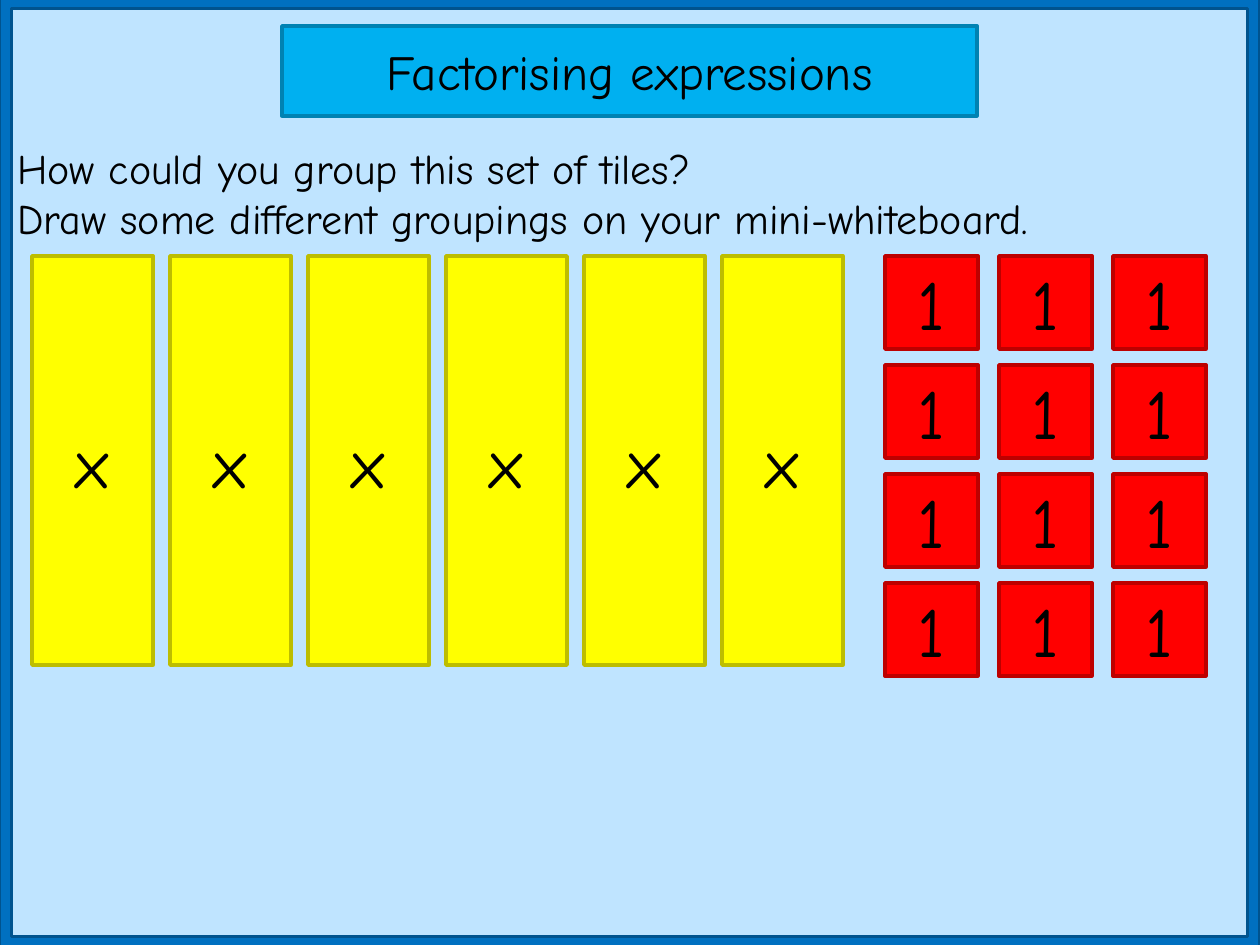
from pptx import Presentation
from pptx.dml.color import RGBColor
from pptx.enum.shapes import MSO_SHAPE as SHAPE
from pptx.enum.text import MSO_ANCHOR as ANCHOR, PP_ALIGN as ALIGN
from pptx.util import Emu, Pt

PX = 914400 // 126


def px(*lengths):
    """Turn px lengths into EMU."""
    return [Emu(n * PX) for n in lengths]


def color(value):
    return RGBColor.from_string(value)


class TileSlide:
    """The slide being built and its style."""
    font = "Comic Neue"
    ink = "000000"
    line_width = Pt(2)

    def __init__(self, prs, background):
        self.s = prs.slides.add_slide(prs.slide_layouts[6])
        fill = self.s.background.fill
        fill.solid()
        fill.fore_color.rgb = color(background)

    def set_text(self, sp, text, size, align):
        tf = sp.text_frame
        tf.word_wrap = True
        tf.text = text
        for p in tf.paragraphs:
            p.alignment = align
            for r in p.runs:
                r.font.name = self.font
                r.font.size = Pt(size)
                r.font.color.rgb = color(self.ink)

    def shape(self, kind, box, fill, line):
        sp = self.s.shapes.add_shape(kind, *px(*box))
        sp.shadow.inherit = False
        sp.fill.solid()
        sp.fill.fore_color.rgb = color(fill)
        sp.line.color.rgb = color(line)
        sp.line.width = self.line_width
        return sp

    def frame(self, box, fill, line, thickness):
        sp = self.shape(SHAPE.FRAME, box, fill, line)
        sp.adjustments[0] = thickness

    def label(self, box, text, size, fill, line):
        """Add a rectangle with centred text."""
        sp = self.shape(SHAPE.RECTANGLE, box, fill, line)
        self.set_text(sp, text, size, ALIGN.CENTER)
        sp.text_frame.vertical_anchor = ANCHOR.MIDDLE

    def text(self, box, text, size):
        sp = self.s.shapes.add_textbox(*px(*box))
        self.set_text(sp, text, size, ALIGN.LEFT)

    def tiles(self, origin, size, step, cols, rows, text, fill, line):
        """Add a grid of equal tiles, column by column."""
        (left, top), (dx, dy) = origin, step
        for col in range(cols):
            for row in range(rows):
                box = (left + col * dx, top + row * dy, *size)
                self.label(box, text, 40, fill, line)


def main():
    prs = Presentation()
    prs.slide_width, prs.slide_height = px(1260, 945)
    slide = TileSlide(prs, "BFE4FF")

    slide.frame((-1, -4, 1261, 953), "0070C0", "00538E", 0.013)
    slide.text((5, 136, 1240, 115),
               "How could you group this set of tiles?\n"
               "Draw some different groupings on your mini-whiteboard.", 24)
    slide.label((282, 26, 695, 90), "Factorising expressions", 28, "00B0F0", "0082B2")
    slide.tiles((32, 256), (121, 409), (138, 0), 6, 1, "x", "FFFF00", "BDBD00")
    slide.tiles((885, 256), (93, 93), (114, 109), 3, 4, "1", "FF0000", "BD0000")

    prs.save("out.pptx")


if __name__ == "__main__":
    main()
